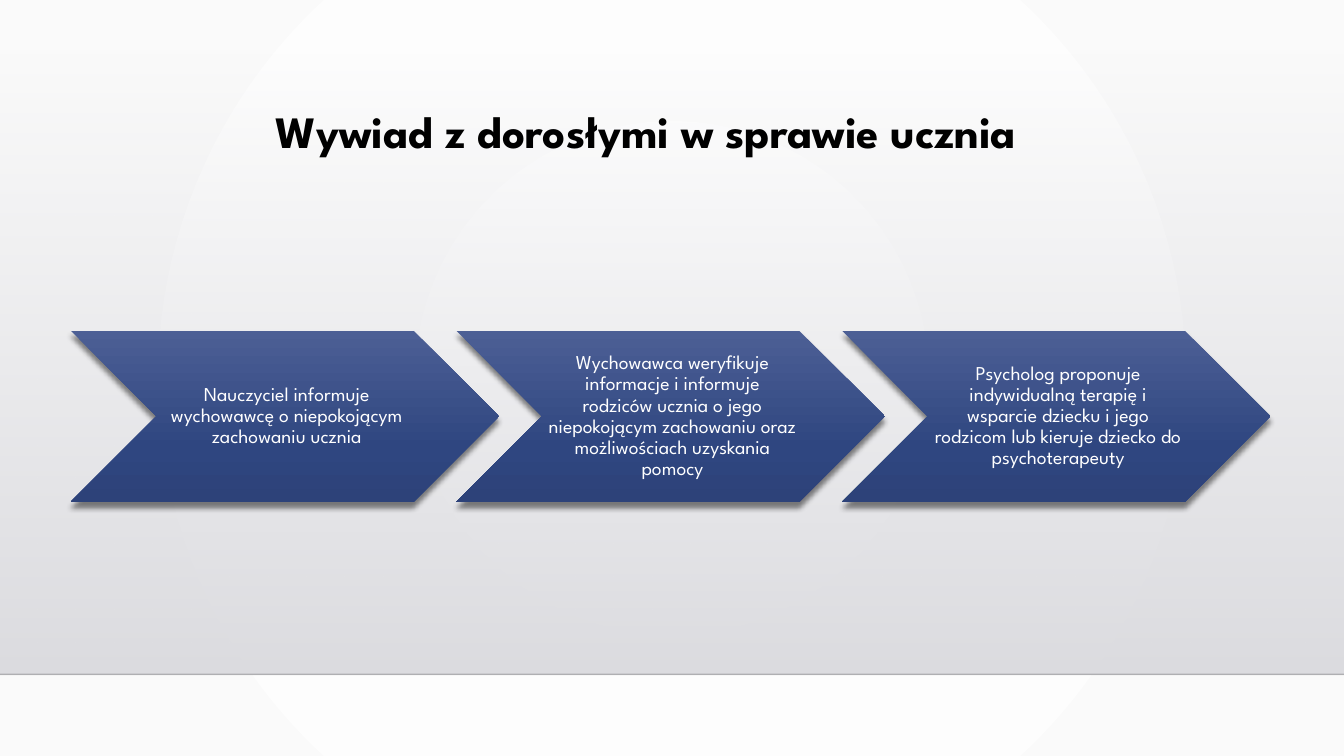
from lxml import etree
from pptx import Presentation
from pptx.dml.color import RGBColor
from pptx.enum.shapes import MSO_CONNECTOR, MSO_SHAPE
from pptx.enum.text import MSO_ANCHOR, PP_ALIGN
from pptx.oxml import parse_xml
from pptx.oxml.ns import nsdecls, qn
from pptx.util import Inches, Pt

CENTER = PP_ALIGN.CENTER
TOP, MIDDLE = MSO_ANCHOR.TOP, MSO_ANCHOR.MIDDLE
RECT, CHEVRON = MSO_SHAPE.RECTANGLE, MSO_SHAPE.CHEVRON
STRAIGHT = MSO_CONNECTOR.STRAIGHT

TITLE = "Wywiad z dorosłymi w sprawie ucznia"
STEPS = [
    "Nauczyciel informuje wychowawcę o niepokojącym zachowaniu ucznia",
    "Wychowawca weryfikuje informacje i informuje rodziców ucznia o jego "
    "niepokojącym zachowaniu oraz możliwościach uzyskania pomocy",
    "Psycholog proponuje indywidualną terapię i wsparcie dziecku i jego "
    "rodzicom lub kieruje dziecko do psychoterapeuty",
]
DOWN = '<a:lin ang="5400000" scaled="0"/>'
RADIAL = ('<a:path path="circle"><a:fillToRect l="50000" t="50000" '
          'r="50000" b="50000"/></a:path>')


def color(value):
    return RGBColor.from_string(value)


def set_gradient(props, stops, direction=DOWN):
    """Replace the solid fill of props by a gradient of (position, colour, alpha) stops."""
    gs = "".join(
        f'<a:gs pos="{pos * 1000}"><a:srgbClr val="{value}">'
        f'<a:alpha val="{alpha * 1000}"/></a:srgbClr></a:gs>'
        for pos, value, alpha in stops)
    solid = props.find(qn("a:solidFill"))
    props.replace(solid, parse_xml(
        f'<a:gradFill {nsdecls("a")} rotWithShape="1">'
        f'<a:gsLst>{gs}</a:gsLst>{direction}</a:gradFill>'))


class Deck:
    font = "League Spartan"
    white, black = "FFFFFF", "000000"
    chevron_stops = [(0, "4C5F95", 100), (69, "2F4680", 100), (100, "2D4279", 100)]

    def __init__(self, prs):
        self.s = prs.slides.add_slide(prs.slide_layouts[5])

    def background(self, stops):
        fill = self.s.background.fill
        fill.solid()
        fill.fore_color.rgb = color(self.white)
        set_gradient(self.s.element.find(".//" + qn("p:bgPr")), stops, RADIAL)

    def shape(self, shapes, kind, box, stops):
        sp = shapes.add_shape(kind, *map(Inches, box))
        sp.shadow.inherit = False
        sp.fill.solid()
        sp.fill.fore_color.rgb = color(self.white)
        set_gradient(sp.element.spPr, stops)
        sp.line.fill.background()
        return sp

    def line(self, x1, y1, x2, y2, value, alpha):
        ln = self.s.shapes.add_connector(STRAIGHT, *map(Inches, (x1, y1, x2, y2)))
        ln.line.width = Pt(1)
        ln.line.color.rgb = color(value)
        clr = ln.element.spPr.find(".//" + qn("a:srgbClr"))
        etree.SubElement(clr, qn("a:alpha"), val=str(alpha * 1000))
        etree.SubElement(ln.element.spPr, qn("a:effectLst"))

    def text(self, sp, text, size, value, anchor, margins, bold=False):
        tf = sp.text_frame
        tf.word_wrap = True
        tf.vertical_anchor = anchor
        (tf.margin_left, tf.margin_top,
         tf.margin_right, tf.margin_bottom) = map(Inches, margins)
        p = tf.paragraphs[0]
        p.alignment = CENTER
        p.line_spacing = 0.9
        r = p.add_run()
        r.text = text
        r.font.name = self.font
        r.font.size = Pt(size)
        r.font.bold = bold
        r.font.color.rgb = color(value)

    def title(self, text, box):
        sp = self.s.shapes.title
        sp.left, sp.top, sp.width, sp.height = map(Inches, box)
        self.text(sp, text, 32, self.black, TOP, (0.1, 0.05, 0.26, 0.05), True)

    def step(self, group, text, x, y, w, h):
        sp = self.shape(group.shapes, CHEVRON, (x, y, w, h), self.chevron_stops)
        effects = sp.element.spPr.find(qn("a:effectLst"))
        effects.append(parse_xml(
            f'<a:outerShdw {nsdecls("a")} blurRad="{Pt(4)}" dist="{Pt(4)}" '
            'dir="5400000" rotWithShape="0"><a:srgbClr val="000000">'
            '<a:alpha val="48000"/></a:srgbClr></a:outerShdw>'))
        # The label spans the part between the notch and the point
        notch = h / 2
        label = group.shapes.add_textbox(
            *map(Inches, (x + notch, y, w - 2 * notch, h)))
        self.text(label, text, 14, self.white, MIDDLE, (0.06, 0.02, 0.02, 0.02))


def main():
    prs = Presentation()
    prs.slide_width, prs.slide_height = Inches(13.33), Inches(7.5)
    deck = Deck(prs)

    # Backdrop: radial background, fading panel and floor line
    deck.background([(0, "FFFFFF", 100), (100, "FAFAFA", 100)])
    deck.shape(deck.s.shapes, RECT, (0, 0.51, 13.33, 6.18),
               [(0, "DCDCE0", 0), (100, "DEDEE2", 100)])
    deck.line(0, 6.69, 13.33, 6.69, "000001", 20)

    # Title, kept in front of the backdrop
    deck.title(TITLE, (1.24, 1.04, 10.5, 1.76))
    title = deck.s.shapes.title.element
    title.getparent().append(title)

    # Process of three chevrons, each overlapping the next by its point
    group = deck.s.shapes.add_group_shape()
    width, height = 4.25, 1.7
    for i, text in enumerate(STEPS):
        deck.step(group, text, 0.7 + i * width * 0.9, 3.28, width, height)

    prs.save("out.pptx")


if __name__ == "__main__":
    main()
